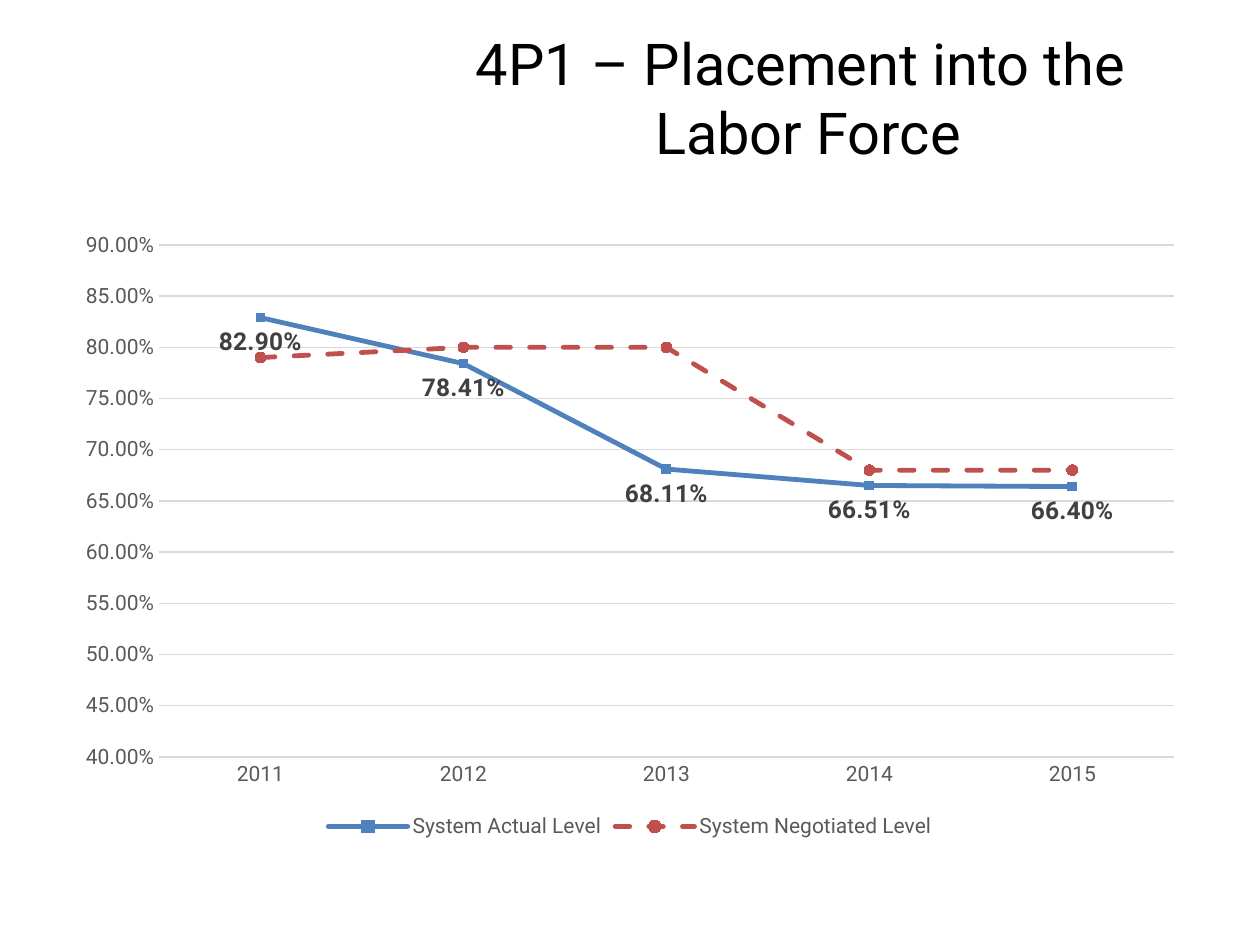
from dataclasses import dataclass

from lxml import etree
from pptx import Presentation
from pptx.chart.data import CategoryChartData
from pptx.dml.color import RGBColor
from pptx.enum.chart import (XL_CHART_TYPE, XL_LABEL_POSITION, XL_LEGEND_POSITION,
                             XL_MARKER_STYLE, XL_TICK_MARK)
from pptx.enum.dml import MSO_LINE
from pptx.enum.text import MSO_ANCHOR, PP_ALIGN
from pptx.oxml.ns import qn
from pptx.util import Pt

EMU_PER_PX = 914400 / 126
LINE_MARKERS = XL_CHART_TYPE.LINE_MARKERS
BELOW = XL_LABEL_POSITION.BELOW
LEGEND_BOTTOM = XL_LEGEND_POSITION.BOTTOM
SQUARE, CIRCLE = XL_MARKER_STYLE.SQUARE, XL_MARKER_STYLE.CIRCLE
NO_TICK = XL_TICK_MARK.NONE
SOLID, DASH = MSO_LINE.SOLID, MSO_LINE.DASH
MIDDLE = MSO_ANCHOR.MIDDLE
CENTER = PP_ALIGN.CENTER
PERCENT = "0.00%"


@dataclass(frozen=True)
class Theme:
    font: str = "Roboto"
    title_color: str = "000000"
    axis_color: str = "595959"
    label_color: str = "404040"
    grid_color: str = "D9D9D9"
    title_size: int = 33
    axis_size: int = 12
    label_size: int = 14


@dataclass(frozen=True)
class Box:
    left: int
    top: int
    width: int
    height: int


@dataclass(frozen=True)
class Level:
    name: str
    values: tuple[float, ...]
    color: str
    marker_color: str
    marker_style: int
    marker_size: int
    dash: int
    labelled: bool


THEME = Theme()
SLIDE_BOX = Box(0, 0, 1260, 945)
TITLE_BOX = Box(388, 32, 840, 130)
CHART_BOX = Box(63, 220, 1134, 624)
PLOT_BOX = Box(159, 245, 1015, 512)
YEARS = ("2011", "2012", "2013", "2014", "2015")
LEVELS = (
    Level("System Actual Level", (0.829, 0.7841, 0.6811, 0.6651, 0.664),
          "4F81BD", "3D7CC7", SQUARE, 5, SOLID, True),
    Level("System Negotiated Level", (0.79, 0.8, 0.8, 0.68, 0.68),
          "C0504D", "CB3E3A", CIRCLE, 6, DASH, False),
)


def px(length: int) -> int:
    return round(length * EMU_PER_PX)


def place(box: Box) -> tuple[int, ...]:
    return tuple(px(n) for n in (box.left, box.top, box.width, box.height))


def style_font(font, size: int, color: str, bold: bool = False) -> None:
    font.name = THEME.font
    font.size = Pt(size)
    font.bold = bold
    font.color.rgb = RGBColor.from_string(color)


def style_line(line, color: str, width: float) -> None:
    line.color.rgb = RGBColor.from_string(color)
    line.width = Pt(width)


def add_title(slide, text: str) -> None:
    title = slide.shapes.title
    title.left, title.top, title.width, title.height = place(TITLE_BOX)
    frame = title.text_frame
    frame.text = text
    frame.word_wrap = True
    frame.vertical_anchor = MIDDLE
    paragraph = frame.paragraphs[0]
    paragraph.alignment = CENTER
    for run in paragraph.runs:
        style_font(run.font, THEME.title_size, THEME.title_color)


def style_axes(chart) -> None:
    for axis in (chart.category_axis, chart.value_axis):
        axis.major_tick_mark = axis.minor_tick_mark = NO_TICK
        style_font(axis.tick_labels.font, THEME.axis_size, THEME.axis_color)
    style_line(chart.category_axis.format.line, THEME.grid_color, 1)
    values = chart.value_axis
    values.minimum_scale, values.maximum_scale, values.major_unit = 0.4, 0.9, 0.05
    values.tick_labels.number_format = PERCENT
    values.tick_labels.number_format_is_linked = False
    values.format.line.fill.background()
    values.has_major_gridlines = True
    style_line(values.major_gridlines.format.line, THEME.grid_color, 0.75)


def style_series(series, level: Level) -> None:
    series.smooth = False
    line = series.format.line
    style_line(line, level.color, 2.75)
    line.dash_style = level.dash
    series.format.line._get_or_add_ln().set("cap", "rnd")
    marker = series.marker
    marker.style = level.marker_style
    marker.size = level.marker_size
    marker.format.fill.solid()
    marker.format.fill.fore_color.rgb = RGBColor.from_string(level.marker_color)
    style_line(marker.format.line, level.color, 0.75)
    if level.labelled:
        labels = series.data_labels
        labels.show_value = True
        labels.position = BELOW
        labels.number_format = PERCENT
        labels.number_format_is_linked = False
        style_font(labels.font, THEME.label_size, THEME.label_color, bold=True)


def fix_plot_area(chart) -> None:
    """Pin the inner plot area to PLOT_BOX, as fractions of the chart."""
    plot_area = chart._chartSpace.chart.plotArea
    for old_layout in plot_area.findall(qn("c:layout")):
        plot_area.remove(old_layout)
    layout = etree.Element(qn("c:layout"))
    plot_area.insert(0, layout)
    manual = etree.SubElement(layout, qn("c:manualLayout"))
    settings = {
        "layoutTarget": "inner", "xMode": "edge", "yMode": "edge",
        "x": (PLOT_BOX.left - CHART_BOX.left) / CHART_BOX.width,
        "y": (PLOT_BOX.top - CHART_BOX.top) / CHART_BOX.height,
        "w": PLOT_BOX.width / CHART_BOX.width,
        "h": PLOT_BOX.height / CHART_BOX.height,
    }
    for name, value in settings.items():
        etree.SubElement(manual, qn(f"c:{name}")).set("val", str(value))


def add_level_chart(slide) -> None:
    data = CategoryChartData(number_format=PERCENT)
    data.categories = YEARS
    for level in LEVELS:
        data.add_series(level.name, level.values)
    chart = slide.shapes.add_chart(LINE_MARKERS, *place(CHART_BOX), data).chart
    chart.has_title = False
    style_font(chart.font, THEME.axis_size, THEME.axis_color)
    chart.plots[0].vary_by_categories = False
    chart.has_legend = True
    chart.legend.position = LEGEND_BOTTOM
    chart.legend.include_in_layout = False
    style_font(chart.legend.font, THEME.axis_size, THEME.axis_color)
    style_axes(chart)
    for series, level in zip(chart.plots[0].series, LEVELS):
        style_series(series, level)
    fix_plot_area(chart)


def main() -> None:
    presentation = Presentation()
    presentation.slide_width = px(SLIDE_BOX.width)
    presentation.slide_height = px(SLIDE_BOX.height)
    slide = presentation.slides.add_slide(presentation.slide_layouts.get_by_name("Title Only"))
    add_title(slide, "4P1 – Placement into the \vLabor Force")
    add_level_chart(slide)
    presentation.save("out.pptx")


if __name__ == "__main__":
    main()
